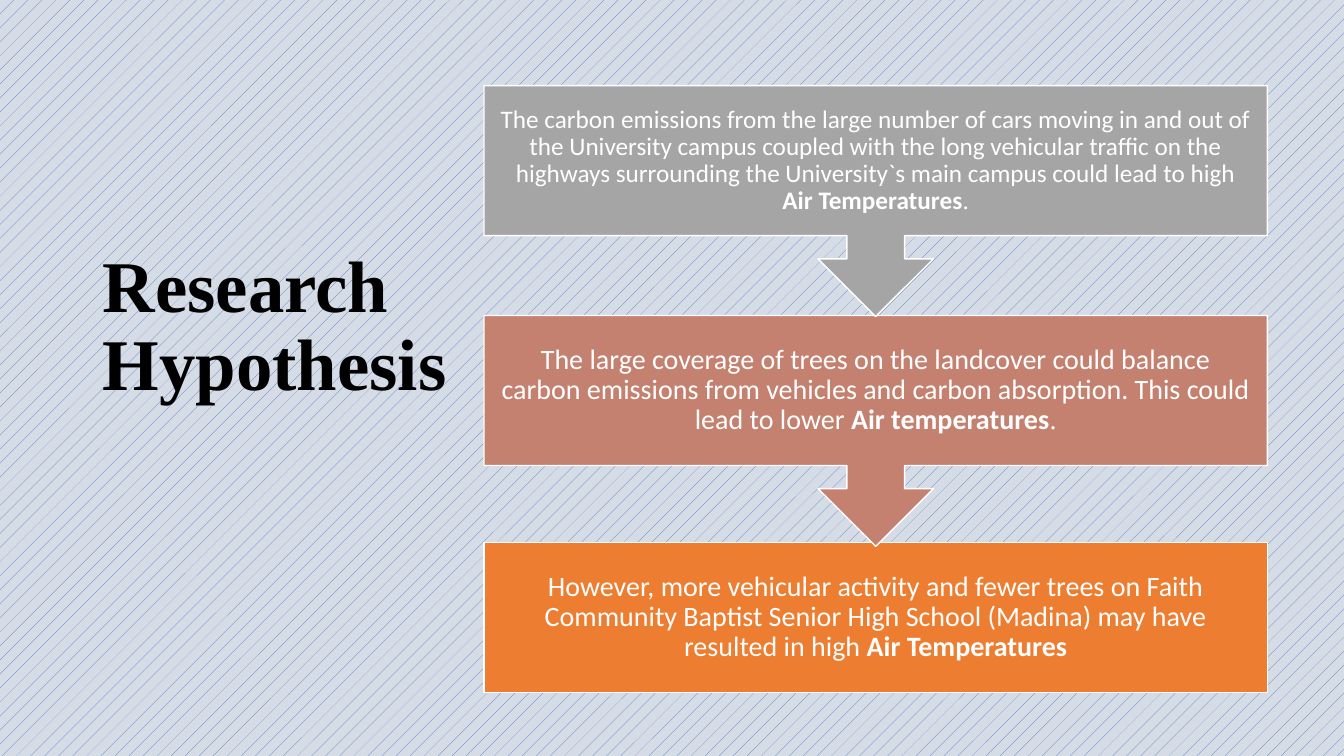
"""Build the Research Hypothesis slide with a three-step downward flow."""
from pptx import Presentation
from pptx.dml.color import RGBColor
from pptx.enum.dml import MSO_PATTERN
from pptx.enum.shapes import MSO_SHAPE as Shape
from pptx.enum.text import MSO_ANCHOR as Anchor, MSO_AUTO_SIZE as AutoSize, PP_ALIGN as Align
from pptx.util import Inches, Pt

BLACK = RGBColor(0x00, 0x00, 0x00)
WHITE = RGBColor(0xFF, 0xFF, 0xFF)
BLUE = RGBColor(0x44, 0x72, 0xC4)
PALE_BLUE = RGBColor(0xD6, 0xDC, 0xE5)
ORANGE = RGBColor(0xED, 0x7D, 0x31)
ROSE = RGBColor(0xC4, 0x81, 0x70)
GREY = RGBColor(0xA5, 0xA5, 0xA5)

STEP_LEFT, STEP_WIDTH = Inches(4.8), Inches(7.77)
BOX_HEIGHT, CALLOUT_HEIGHT = Inches(1.49), Inches(2.29)

prs = Presentation()
prs.slide_width, prs.slide_height = Inches(13.33), Inches(7.5)
slide = prs.slides.add_slide(prs.slide_layouts[5])

backdrop = slide.background.fill
backdrop.patterned()
backdrop.pattern = MSO_PATTERN.PERCENT_5
backdrop.fore_color.rgb = BLUE
backdrop.back_color.rgb = PALE_BLUE

title = slide.shapes.title
title.left, title.top = Inches(0.92), Inches(0.61)
title.width, title.height = Inches(3.69), Inches(6.09)
title_frame = title.text_frame
title_frame.text = "Research Hypothesis"
title_frame.word_wrap = True
title_frame.auto_size = AutoSize.NONE
title_frame.vertical_anchor = Anchor.MIDDLE
title_frame.margin_bottom = Inches(0.85)
heading = title_frame.paragraphs[0]
heading.alignment = Align.LEFT
heading.line_spacing = 0.9
heading.font.name = "Times New Roman"
heading.font.size = Pt(52)
heading.font.bold = True
heading.font.color.rgb = BLACK

steps = [
    (5.38, Shape.RECTANGLE, BOX_HEIGHT, ORANGE, 20, 0.16,
     "However, more vehicular activity and fewer trees on Faith Community Baptist "
     "Senior High School (Madina) may have resulted in high ",
     "Air Temperatures", ""),
    (3.13, Shape.UP_ARROW_CALLOUT, CALLOUT_HEIGHT, ROSE, 20, 0.16,
     "The large coverage of trees on the landcover could balance carbon emissions "
     "from vehicles and carbon absorption. This could lead to lower ",
     "Air temperatures", "."),
    (0.85, Shape.UP_ARROW_CALLOUT, CALLOUT_HEIGHT, GREY, 18, 0.14,
     "The carbon emissions from the large number of cars moving in and out of the "
     "University campus coupled with the long vehicular traffic on the highways "
     "surrounding the University`s main campus could lead to high ",
     "Air Temperatures", "."),
]

for top, outline, height, color, size, inset, statement, outcome, ending in steps:
    step = slide.shapes.add_shape(outline, STEP_LEFT, Inches(top), STEP_WIDTH, height)
    step.shadow.inherit = False
    step.fill.solid()
    step.fill.fore_color.rgb = color
    step.line.color.rgb = WHITE
    step.line.width = Pt(1)
    if outline == Shape.UP_ARROW_CALLOUT:
        step.rotation = 180

    label = slide.shapes.add_textbox(STEP_LEFT, Inches(top), STEP_WIDTH, BOX_HEIGHT)
    frame = label.text_frame
    frame.word_wrap = True
    frame.vertical_anchor = Anchor.MIDDLE
    frame.margin_left = frame.margin_right = Inches(inset)
    frame.margin_top = frame.margin_bottom = Inches(inset)
    hypothesis = frame.paragraphs[0]
    hypothesis.alignment = Align.CENTER
    hypothesis.line_spacing = 0.9
    hypothesis.font.name = "Calibri"
    hypothesis.font.size = Pt(size)
    hypothesis.font.color.rgb = WHITE
    hypothesis.add_run().text = statement
    emphasis = hypothesis.add_run()
    emphasis.text = outcome
    emphasis.font.bold = True
    if ending:
        stop = hypothesis.add_run()
        stop.text = ending
        stop.font.name = "Times New Roman"

prs.save("out.pptx")
